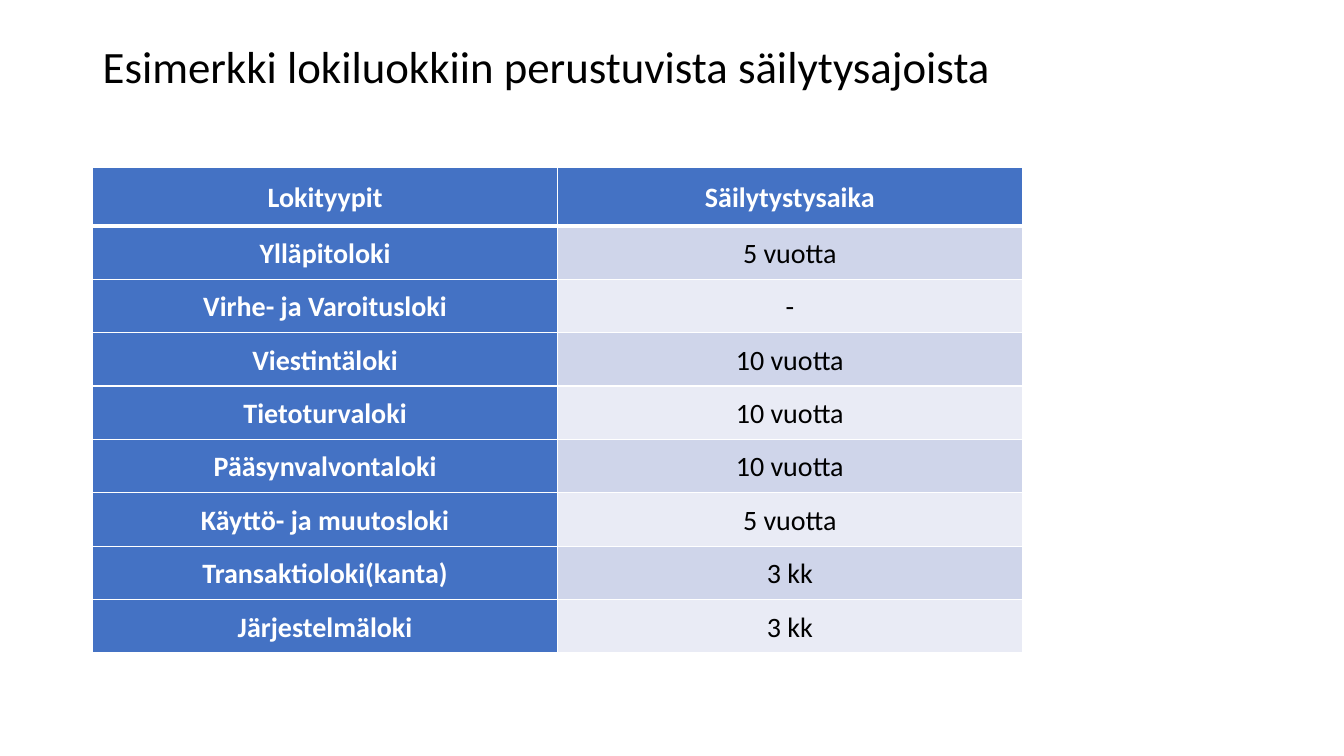
from dataclasses import dataclass

from lxml.etree import SubElement
from pptx import Presentation
from pptx.dml.color import RGBColor
from pptx.enum.text import MSO_ANCHOR as Anchor, PP_ALIGN as Align
from pptx.oxml.ns import qn
from pptx.util import Inches, Length, Pt

WHITE = RGBColor(0xFF, 0xFF, 0xFF)
BLACK = RGBColor(0x00, 0x00, 0x00)
BLUE = RGBColor(0x44, 0x72, 0xC4)
BANDS = (RGBColor(0xE9, 0xEB, 0xF5), RGBColor(0xCF, 0xD5, 0xEA))
FONT = "Calibri"
WIDTH, HEIGHT = Inches(13.33), Inches(7.5)

# Percentages of the slide's width or height
LEFT = 6.9
TITLE_TOP, TITLE_WIDTH, TITLE_HEIGHT = 5.33, 89.5, 19.33
TABLE_TOP, COL_WIDTH = 22.13, 34.58
HEAD_HEIGHT, ROW_HEIGHT = 7.73, 7.07


@dataclass(frozen=True)
class LogType:
    name: str
    retention: str


HEADER = LogType("Lokityypit", "Säilytystysaika")
LOGS = [
    LogType("Ylläpitoloki", "5 vuotta"),
    LogType("Virhe- ja Varoitusloki", "-"),
    LogType("Viestintäloki", "10 vuotta"),
    LogType("Tietoturvaloki", "10 vuotta"),
    LogType("Pääsynvalvontaloki", "10 vuotta"),
    LogType("Käyttö- ja muutosloki", "5 vuotta"),
    LogType("Transaktioloki(kanta)", "3 kk"),
    LogType("Järjestelmäloki", "3 kk"),
]


def across(percent: float) -> Length:
    return Length(round(WIDTH * percent / 100))


def down(percent: float) -> Length:
    return Length(round(HEIGHT * percent / 100))


def apply(target, values: dict) -> None:
    for name, value in values.items():
        setattr(target, name, value)


def write(tf, text: str, color: RGBColor, font: dict, layout: dict) -> None:
    p = tf.paragraphs[0]
    apply(p, layout)
    r = p.add_run()
    r.text = text
    apply(r.font, {"name": FONT, **font})
    r.font.color.rgb = color


def add_borders(cell, top: float, bottom: float) -> None:
    tc_pr = cell._tc.get_or_add_tcPr()
    for side, points in {"L": 1, "R": 1, "T": top, "B": bottom}.items():
        ln = SubElement(tc_pr, qn(f"a:ln{side}"), w=str(Pt(points)))
        fill = SubElement(ln, qn("a:solidFill"))
        SubElement(fill, qn("a:srgbClr"), val=str(WHITE))


def fill_cell(cell, text: str, row: int, col: int) -> None:
    label = row == 0 or col == 0
    add_borders(cell, top=3 if row == 1 else 1, bottom=3 if row == 0 else 1)
    cell.fill.solid()
    cell.fill.fore_color.rgb = BLUE if label else BANDS[row % 2]
    apply(cell, {
        "vertical_anchor": Anchor.MIDDLE,
        "margin_left": Inches(0.07), "margin_right": Inches(0.07),
        "margin_top": 0, "margin_bottom": 0,
    })
    write(cell.text_frame, text, WHITE if label else BLACK,
          {"size": Pt(20), "bold": label},
          {"alignment": Align.CENTER, "line_spacing": 1.07,
           "space_after": Pt(0 if row and col == 0 else 2.4)})


def add_log_table(s, logs: list[LogType]) -> None:
    rows = [HEADER, *logs]
    table = s.shapes.add_table(
        len(rows), 2, across(LEFT), down(TABLE_TOP), across(2 * COL_WIDTH),
        down(HEAD_HEIGHT + len(logs) * ROW_HEIGHT)).table
    for column in table.columns:
        column.width = across(COL_WIDTH)
    for i, log in enumerate(rows):
        table.rows[i].height = down(ROW_HEIGHT if i else HEAD_HEIGHT)
        for j, text in enumerate((log.name, log.retention)):
            fill_cell(table.cell(i, j), text, i, j)


def add_title(s, text: str) -> None:
    sp = s.shapes.add_textbox(across(LEFT), down(TITLE_TOP),
                              across(TITLE_WIDTH), down(TITLE_HEIGHT))
    tf = sp.text_frame
    tf.word_wrap = True
    write(tf, text, BLACK, {"size": Pt(32)}, {"line_spacing": 0.9})


def main() -> None:
    prs = Presentation()
    apply(prs, {"slide_width": WIDTH, "slide_height": HEIGHT})
    s = prs.slides.add_slide(prs.slide_layouts[6])

    # Retention times by log type
    add_log_table(s, LOGS)

    # Heading
    add_title(s, "Esimerkki lokiluokkiin perustuvista säilytysajoista")

    prs.save("out.pptx")


if __name__ == "__main__":
    main()
